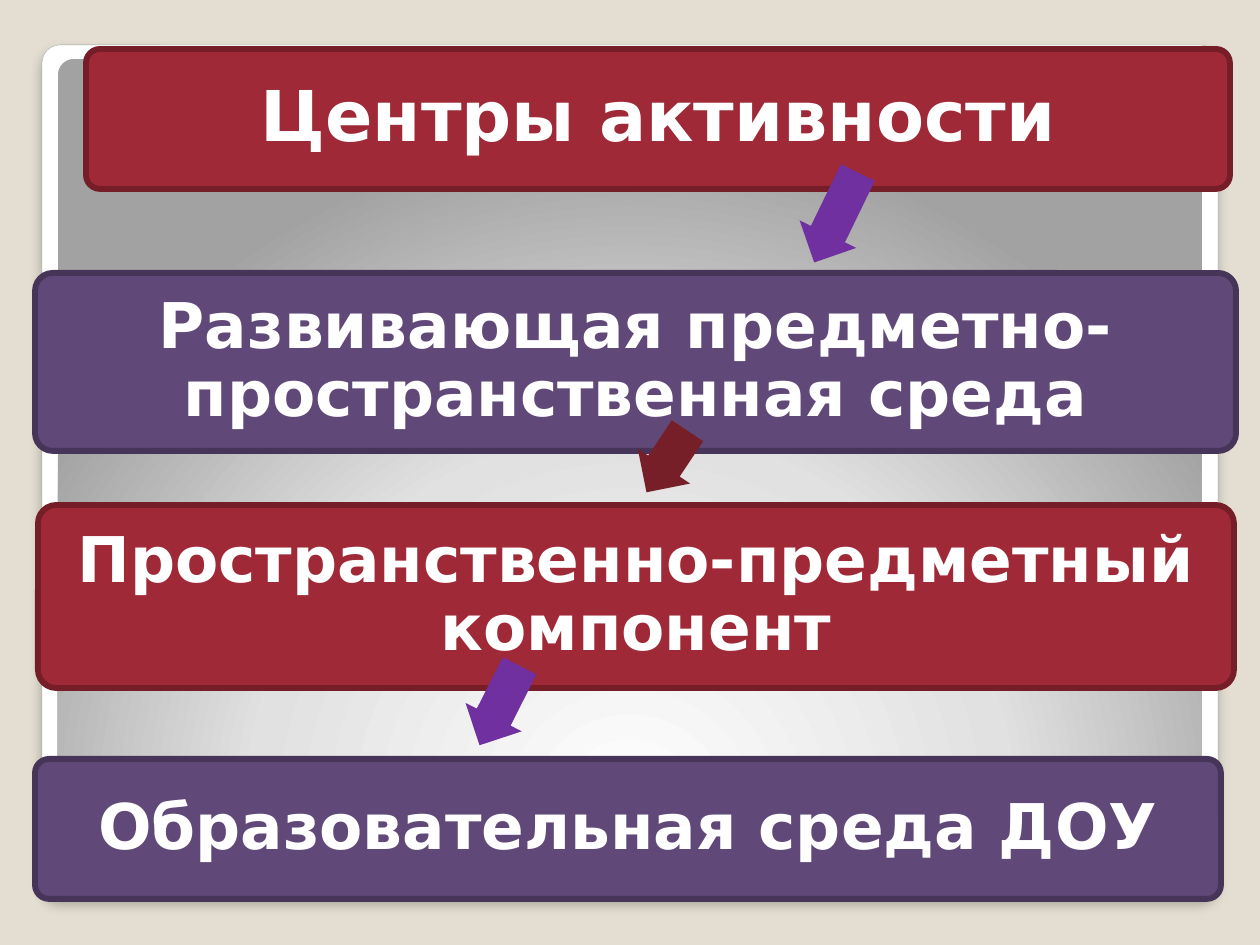
from pptx import Presentation
from pptx.dml.color import RGBColor
from pptx.enum.shapes import MSO_SHAPE
from pptx.enum.text import MSO_ANCHOR, PP_ALIGN
from pptx.oxml import parse_xml
from pptx.oxml.ns import nsdecls, qn
from pptx.util import Emu, Pt

ROUNDED = MSO_SHAPE.ROUNDED_RECTANGLE
ARROW = MSO_SHAPE.RIGHT_ARROW
MIDDLE = MSO_ANCHOR.MIDDLE
CENTER = PP_ALIGN.CENTER

WHITE = RGBColor(0xFF, 0xFF, 0xFF)
BEIGE = RGBColor(0xE3, 0xDE, 0xD1)
GRAY = RGBColor(0xA4, 0xA4, 0xA4)
RED = RGBColor(0x9F, 0x29, 0x36)
DARK_RED = RGBColor(0x76, 0x1E, 0x28)
ARROW_RED = RGBColor(0x77, 0x1F, 0x28)
PURPLE = RGBColor(0x60, 0x48, 0x78)
DARK_PURPLE = RGBColor(0x47, 0x35, 0x59)
VIOLET = RGBColor(0x70, 0x30, 0xA0)

FRAME_STOPS = ((0, "FFFFFF"), (98, "FFFFFF"), (99, "F7F7F7"), (100, "DADADA"))
PANEL_STOPS = ((0, "FFFFFF"), (55, "E1E1E1"), (100, "A2A2A2"))
DOWNWARD = '<a:lin ang="5400000" scaled="0"/>'
RADIAL = (
    '<a:path path="circle">'
    '<a:fillToRect l="50000" t="175000" r="50000" b="-75000"/></a:path>'
)

STEPS = (
    ("Центры активности", (86, 49, 1144, 140), 40, 21, RED, DARK_RED),
    ("Развивающая предметно-пространственная среда",
     (35, 273, 1201, 178), 36, 19, PURPLE, DARK_PURPLE),
    ("Пространственно-предметный компонент",
     (38, 505, 1196, 183), 36, 19, RED, DARK_RED),
    ("Образовательная среда ДОУ",
     (35, 759, 1186, 140), 36, 19, PURPLE, DARK_PURPLE),
)
ARROWS = (
    ((786, 186, 100, 63), 115.9, VIOLET),
    ((630, 430, 74, 63), 123.7, ARROW_RED),
    ((455, 674, 89, 63), 116.8, VIOLET),
)


def px(length):
    """Turn px into EMU."""
    return Emu(round(length * 914400 / 126))


class Painter:
    """Hold the text style and the current slide."""

    font = "DejaVu Sans"
    text_color = WHITE

    def __init__(self, page):
        """Keep the slide to draw on."""
        self.page = page

    def shape(self, kind, frame, color, adjustments):
        """Add a filled shape without line or shadow."""
        shape = self.page.shapes.add_shape(kind, *map(px, frame))
        shape.shadow.inherit = False
        shape.fill.solid()
        shape.fill.fore_color.rgb = color
        shape.line.fill.background()
        for index, value in enumerate(adjustments):
            shape.adjustments[index] = value
        return shape

    def outline(self, shape, color, width):
        """Give a shape a solid line."""
        shape.line.color.rgb = color
        shape.line.width = Pt(width)

    def panel(self, frame, stops, direction):
        """Add a rounded panel with a gradient."""
        panel = self.shape(ROUNDED, frame, WHITE, [0.021])
        stop_xml = "".join(
            f'<a:gs pos="{position * 1000}"><a:srgbClr val="{color}"/></a:gs>'
            for position, color in stops
        )
        gradient = parse_xml(
            f'<a:gradFill {nsdecls("a")} rotWithShape="1">'
            f"<a:gsLst>{stop_xml}</a:gsLst>{direction}</a:gradFill>"
        )
        properties = panel.element.spPr
        properties.replace(properties.find(qn("a:solidFill")), gradient)
        return panel

    def drop_shadow(self, shape):
        """Add a soft shadow below a shape."""
        effects = shape.element.spPr.find(qn("a:effectLst"))
        effects.append(parse_xml(
            f'<a:outerShdw {nsdecls("a")} blurRad="{Pt(6)}" dist="{Pt(4)}" '
            'dir="5400000" rotWithShape="0"><a:srgbClr val="000000">'
            '<a:alpha val="25000"/></a:srgbClr></a:outerShdw>'
        ))

    def step(self, text, frame, size, inset, color, border):
        """Add a rounded box with centred bold text."""
        box = self.shape(ROUNDED, frame, color, [0.1])
        self.outline(box, border, 3.35)
        body = box.text_frame
        body.word_wrap = True
        body.vertical_anchor = MIDDLE
        body.margin_left = body.margin_right = px(inset)
        body.margin_top = body.margin_bottom = px(inset)
        para = body.paragraphs[0]
        para.alignment = CENTER
        para.line_spacing = 0.9
        span = para.add_run()
        span.text = text
        span.font.name = self.font
        span.font.size = Pt(size)
        span.font.bold = True
        span.font.color.rgb = self.text_color

    def arrow(self, frame, angle, color):
        """Add a rotated block arrow."""
        arrow = self.shape(ARROW, frame, color, [0.6, 0.5])
        arrow.rotation = angle


def main():
    """Build the deck."""
    deck = Presentation()
    deck.slide_width, deck.slide_height = px(1260), px(945)
    page = deck.slides.add_slide(deck.slide_layouts[6])
    page.background.fill.solid()
    page.background.fill.fore_color.rgb = BEIGE

    painter = Painter(page)
    frame = painter.panel((42, 45, 1176, 854), FRAME_STOPS, DOWNWARD)
    painter.outline(frame, GRAY, 0.16)
    painter.drop_shadow(frame)
    painter.panel((58, 59, 1144, 756), PANEL_STOPS, RADIAL)
    for step in STEPS:
        painter.step(*step)
    for arrow in ARROWS:
        painter.arrow(*arrow)
    deck.save("out.pptx")


if __name__ == "__main__":
    main()
